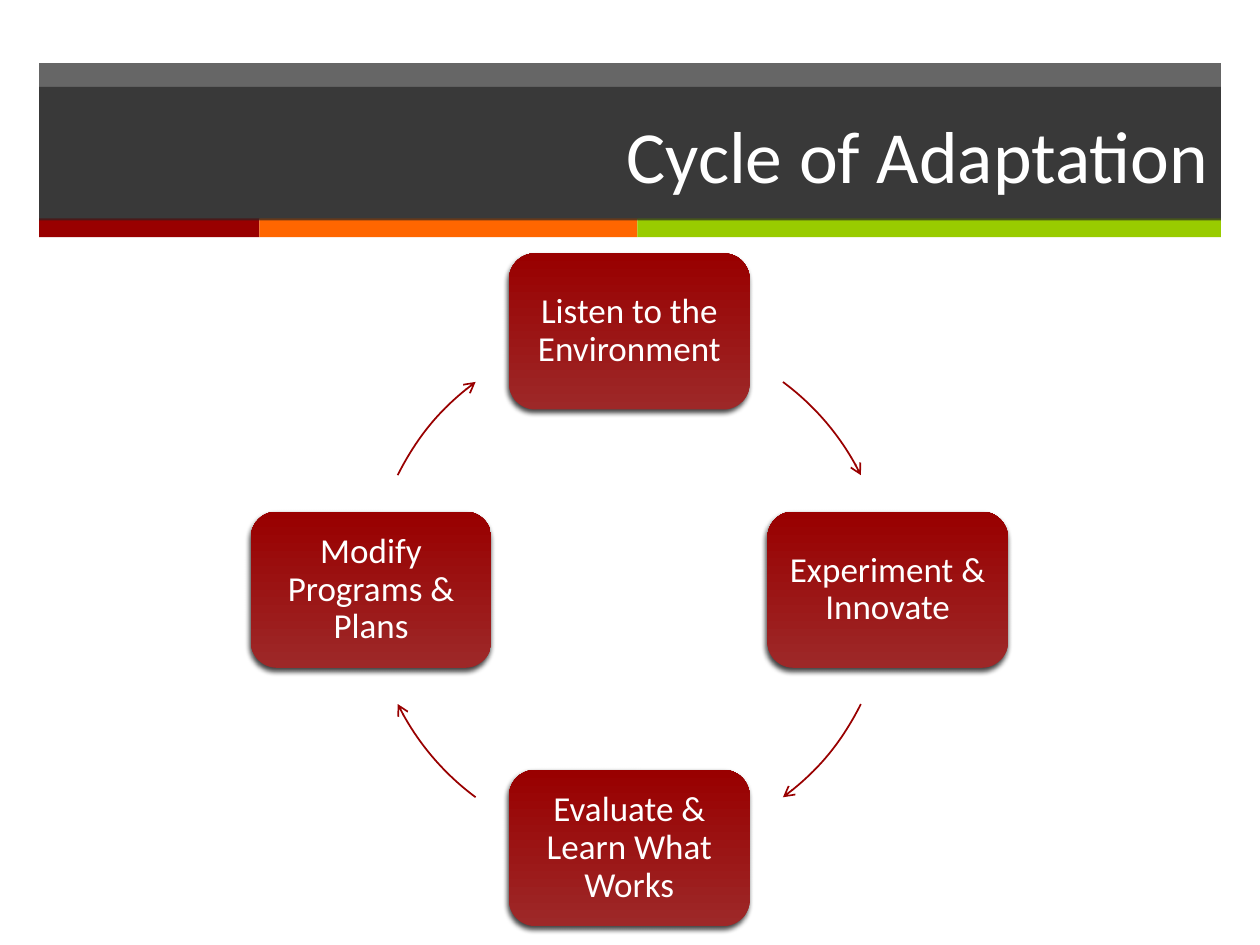
import math
from dataclasses import dataclass

import pptx
import pptx.dml.color
import pptx.enum.shapes
import pptx.enum.text
import pptx.oxml
import pptx.oxml.ns
import pptx.util

SHAPE = pptx.enum.shapes.MSO_SHAPE
ALIGN = pptx.enum.text.PP_ALIGN
NS = pptx.oxml.ns.nsdecls("a")
WIDTH, HEIGHT = pptx.util.Inches(10), pptx.util.Inches(7.5)

CHARCOAL, RED, BRICK = "262626", "990000", "9D2828"
ORANGE, GREEN, WHITE = "FF6600", "99CC00", "FFFFFF"


@dataclass
class Box:
    """A rectangle in percent of the slide's width and height."""
    x: float
    y: float
    w: float
    h: float

    def emu(self) -> tuple:
        return (int(self.x * WIDTH / 100), int(self.y * HEIGHT / 100),
                int(self.w * WIDTH / 100), int(self.h * HEIGHT / 100))

    @classmethod
    def centred(cls, cx: float, cy: float, w: float, h: float) -> "Box":
        return cls(cx - w / 2, cy - h / 2, w, h)


@dataclass
class Stage:
    text: str
    angle: int  # degrees clockwise from the right


HEADER = Box(3.1, 6.67, 93.8, 16.53)
TITLE = Box(3.1, 9.2, 93.8, 14.13)
STRIPES = [(17.5, RED), (30, ORANGE), (46.3, GREEN)]

CX, CY = 49.95, 62.4
RX = 20.5
RY = RX * WIDTH / HEIGHT
NODE_W, NODE_H = 19.1, 16.53
ARC_START, ARC_END = 36.5, 63.7  # arrow span after a top or bottom stage
STAGES = [
    Stage("Listen to the Environment", 270),
    Stage("Experiment & Innovate", 0),
    Stage("Evaluate & Learn What Works", 90),
    Stage("Modify Programs & Plans", 180),
]


def rgb(colour: str) -> pptx.dml.color.RGBColor:
    return pptx.dml.color.RGBColor.from_string(colour)


def write(sp, text: str, size: float, align=ALIGN.CENTER, spacing=None, inset=None) -> None:
    tf = sp.text_frame
    tf.word_wrap = True
    tf.auto_size = pptx.enum.text.MSO_AUTO_SIZE.NONE
    tf.vertical_anchor = pptx.enum.text.MSO_ANCHOR.MIDDLE
    if inset is not None:
        tf.margin_left = tf.margin_right = pptx.util.Inches(inset)
        tf.margin_top = tf.margin_bottom = pptx.util.Inches(inset)
    p = tf.paragraphs[0]
    p.alignment = align
    p.line_spacing = spacing
    r = p.add_run()
    r.text = text
    r.font.name = "Calibri"
    r.font.size = pptx.util.Pt(size)
    r.font.color.rgb = rgb(WHITE)


def fill_solid(sp, colour: str, opacity: int = 100) -> None:
    sp.fill.solid()
    sp.fill.fore_color.rgb = rgb(colour)
    if opacity < 100:
        clr = sp._element.spPr.find(".//" + pptx.oxml.ns.qn("a:srgbClr"))
        clr.append(pptx.oxml.parse_xml(f'<a:alpha {NS} val="{opacity * 1000}"/>'))


def add_bar(s, box: Box, colour: str, opacity: int = 100) -> None:
    sp = s.shapes.add_shape(SHAPE.RECTANGLE, *box.emu())
    sp.shadow.inherit = False
    sp.line.fill.background()
    fill_solid(sp, colour, opacity)


def add_header(s, text: str) -> None:
    add_bar(s, HEADER, CHARCOAL, 70)
    x = HEADER.x
    for width, colour in STRIPES:
        add_bar(s, Box(x, 23.1, width, 2), colour)
        x += width
    title = s.shapes.title
    title.left, title.top, title.width, title.height = TITLE.emu()
    fill_solid(title, CHARCOAL, 70)
    write(title, text, 42, align=ALIGN.RIGHT)
    s.shapes._spTree.append(title._element)  # bring in front of the bars


def add_stage(s, stage: Stage) -> None:
    a = math.radians(stage.angle)
    box = Box.centred(CX + RX * math.cos(a), CY + RY * math.sin(a), NODE_W, NODE_H)
    sp = s.shapes.add_shape(SHAPE.ROUNDED_RECTANGLE, *box.emu())
    sp.line.fill.background()
    sp.fill.gradient()
    sp.fill.gradient_angle = 90
    for stop, colour in zip(sp.fill.gradient_stops, (BRICK, RED)):
        stop.color.rgb = rgb(colour)
    sp.shadow.inherit = False
    effects = sp._element.spPr.find(pptx.oxml.ns.qn("a:effectLst"))
    effects.append(pptx.oxml.parse_xml(
        f'<a:outerShdw {NS} blurRad="{pptx.util.Pt(3)}" dist="{pptx.util.Pt(2)}" '
        f'dir="{110 * 60000}" rotWithShape="0"><a:srgbClr val="000000">'
        '<a:alpha val="75000"/></a:srgbClr></a:outerShdw>'))
    write(sp, stage.text, 20, spacing=0.9, inset=0.08)


def add_arrow(s, stage: Stage) -> None:
    """Draw the curved arrow from a stage to the next one clockwise."""
    span = (ARC_START, ARC_END)
    if stage.angle % 180 == 0:
        span = (90 - ARC_END, 90 - ARC_START)
    sp = s.shapes.add_shape(SHAPE.ARC, *Box.centred(CX, CY, 2 * RX, 2 * RY).emu())
    for i, offset in enumerate(span):
        sp.adjustments[i] = (stage.angle + offset) * 0.6  # 60000 units per degree
    sp.shadow.inherit = False
    sp.fill.background()
    sp.line.color.rgb = rgb(RED)
    sp.line.width = pptx.util.Pt(1)
    ln = sp._element.spPr.find(pptx.oxml.ns.qn("a:ln"))
    ln.append(pptx.oxml.parse_xml(f'<a:tailEnd {NS} type="arrow"/>'))


def main() -> None:
    prs = pptx.Presentation()
    prs.slide_width, prs.slide_height = WIDTH, HEIGHT
    s = prs.slides.add_slide(prs.slide_layouts.get_by_name("Title Only"))
    add_header(s, "Cycle of Adaptation")
    for stage in STAGES:
        add_stage(s, stage)
        add_arrow(s, stage)
    prs.save("out.pptx")


if __name__ == "__main__":
    main()
